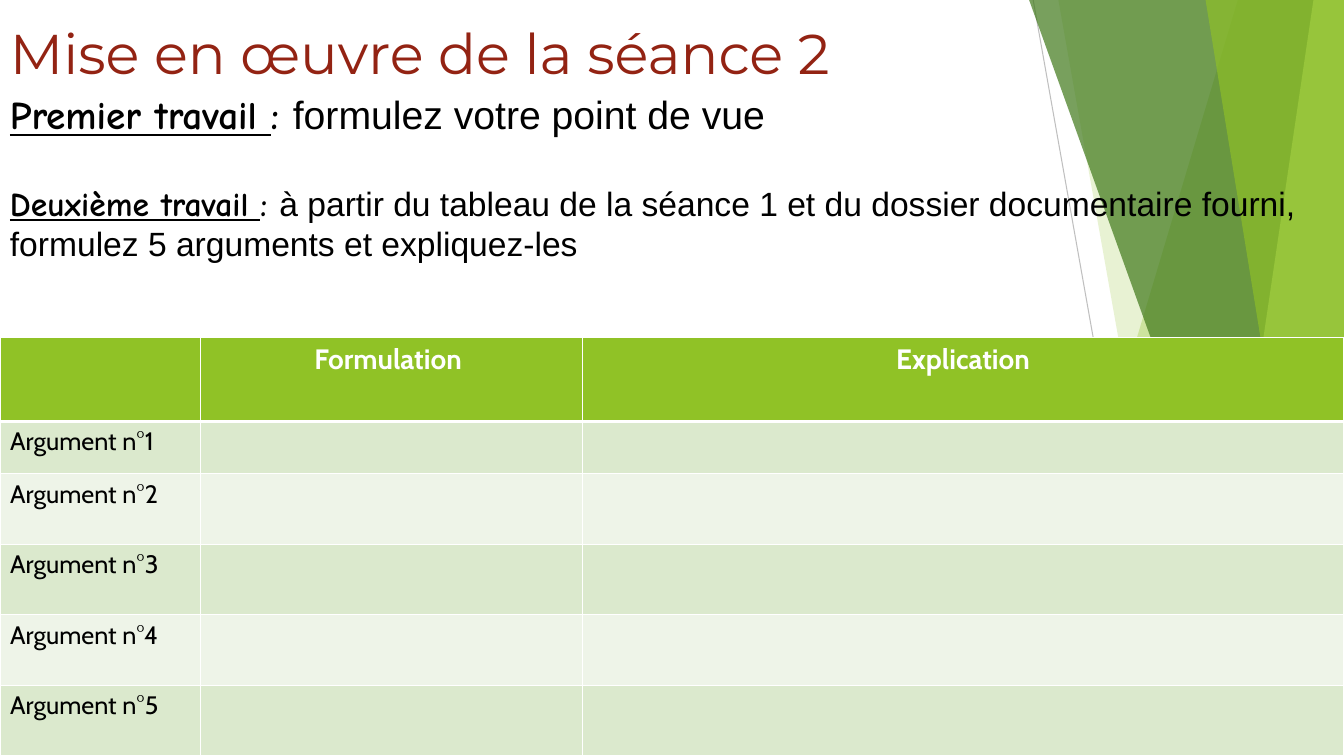
from lxml.etree import SubElement
from pptx import Presentation
from pptx.dml.color import RGBColor
from pptx.enum.shapes import MSO_CONNECTOR
from pptx.enum.text import PP_ALIGN
from pptx.oxml.ns import qn
from pptx.util import Pt

WIDTH, HEIGHT = 960, 540
WHITE, BLACK, GREEN = "FFFFFF", "000000", "90C226"

# top-left x, bottom-left x, colour, opacity in percent
BANDS = [
    (884.2, 722.9, GREEN, 30),
    (756, 851.8, GREEN, 20),
    (735.1, 929.5, "3F7819", 70),
    (938.2, 858.2, "C0E474", 70),
    (861.1, 949, GREEN, 65),
]
TITLE = "Mise en œuvre de la séance 2"
TASKS = [
    ("Premier travail ", "formulez votre point de vue", 28, 0),
    ("Deuxième travail ",
     "à partir du tableau de la séance 1 et du dossier documentaire fourni, "
     "formulez 5 arguments et expliquez-les", 24, 32),
]
HEADINGS = ["", "Formulation ", "Explication"]
ROWS = [HEADINGS] + [[f"Argument n°{number}", "", ""] for number in range(1, 6)]
COLUMN_WIDTHS = [143, 273, 544]
ROW_HEIGHTS = [59.8, 37.4] + [50.4] * 4
ROW_FILLS = ["EEF4E8", "DBE9CD"]


def color(code):
    return RGBColor.from_string(code)


def style(font, name, size, code, bold=False):
    font.name, font.size, font.bold = name, Pt(size), bold
    font.color.rgb = color(code)


def add_band(page, top_x, bottom_x, code, opacity):
    builder = page.shapes.build_freeform(Pt(top_x), 0)
    corners = [(WIDTH, 0), (WIDTH, HEIGHT), (bottom_x, HEIGHT)]
    builder.add_line_segments([(Pt(x), Pt(y)) for x, y in corners])
    band = builder.convert_to_shape()
    band.shadow.inherit = False
    band.line.fill.background()
    band.fill.solid()
    band.fill.fore_color.rgb = color(code)
    tint = band.fill._xPr.find(".//" + qn("a:srgbClr"))
    SubElement(tint, qn("a:alpha"), val=str(opacity * 1000))


def add_text_box(page, left, top, width, height):
    box = page.shapes.add_textbox(Pt(left), Pt(top), Pt(width), Pt(height))
    box.text_frame.word_wrap = True
    return box.text_frame


def set_borders(cell, top, bottom):
    properties = cell._tc.get_or_add_tcPr()
    for side, width in (("L", 1), ("R", 1), ("T", top), ("B", bottom)):
        line = SubElement(properties, qn("a:ln" + side), w=str(Pt(width)))
        SubElement(SubElement(line, qn("a:solidFill")), qn("a:srgbClr"), val=WHITE)


deck = Presentation()
deck.slide_width, deck.slide_height = Pt(WIDTH), Pt(HEIGHT)
page = deck.slides.add_slide(deck.slide_layouts[6])

ray = page.shapes.add_connector(MSO_CONNECTOR.STRAIGHT, Pt(738), 0, Pt(834), Pt(HEIGHT))
ray.line.color.rgb = color("BFBFBF")
ray.line.width = Pt(0.75)
SubElement(ray._element.spPr, qn("a:effectLst"))
for band in BANDS:
    add_band(page, *band)

title = add_text_box(page, 0, 10, 670, 55.4).paragraphs[0]
title.text = TITLE
style(title.font, "Montserrat", 40, "932313")

tasks = add_text_box(page, 0, 61.2, 952, 155)
for index, (label, task, size, gap) in enumerate(TASKS):
    para = tasks.add_paragraph() if index else tasks.paragraphs[0]
    para.space_before = Pt(gap)
    for text, name, marked, underlined in [
        (label, "Comic Neue", True, True),
        (": ", "Comic Neue", True, False),
        (task, "Arial", False, False),
    ]:
        span = para.add_run()
        span.text = text
        style(span.font, name, size, BLACK, marked)
        span.font.underline = underlined

table_height = sum(ROW_HEIGHTS)
table = page.shapes.add_table(
    len(ROWS), len(HEADINGS), 0, Pt(HEIGHT - table_height), Pt(WIDTH), Pt(table_height)
).table
for column, width in zip(table.columns, COLUMN_WIDTHS):
    column.width = Pt(width)
for index, (row, height, texts) in enumerate(zip(table.rows, ROW_HEIGHTS, ROWS)):
    row.height = Pt(height)
    header = index == 0
    for cell, text in zip(row.cells, texts):
        set_borders(cell, 3 if index == 1 else 1, 3 if header else 1)
        cell.fill.solid()
        cell.fill.fore_color.rgb = color(GREEN if header else ROW_FILLS[index % 2])
        para = cell.text_frame.paragraphs[0]
        para.text = text
        para.alignment = PP_ALIGN.CENTER if header else PP_ALIGN.LEFT
        style(para.font, "Cabin", 20 if header else 18, WHITE if header else BLACK, header)

deck.save("out.pptx")
